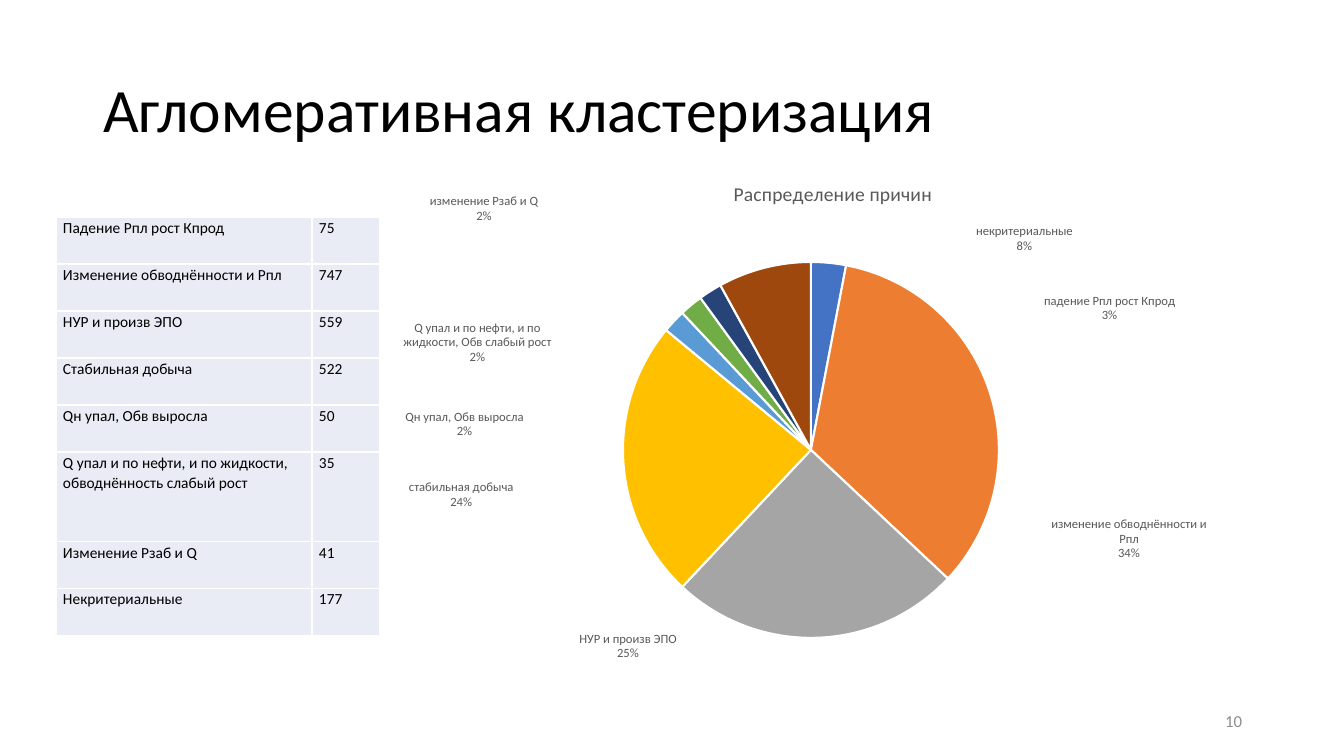
from lxml import etree
from pptx import Presentation
from pptx.chart.data import CategoryChartData
from pptx.dml.color import RGBColor
from pptx.enum.chart import XL_CHART_TYPE, XL_LABEL_POSITION
from pptx.enum.text import MSO_ANCHOR, PP_ALIGN
from pptx.oxml import parse_xml
from pptx.oxml.ns import nsdecls, qn
from pptx.util import Pt

PX = 914400 / 100.8
FONT = "Calibri"
PIE, OUTSIDE = XL_CHART_TYPE.PIE, XL_LABEL_POSITION.OUTSIDE_END
MIDDLE, LEFT, RIGHT = MSO_ANCHOR.MIDDLE, PP_ALIGN.LEFT, PP_ALIGN.RIGHT
COLORS = {"text": "000000", "number": "8C8C8C", "label": "595959",
          "cell": "E9EBF5", "white": "FFFFFF"}
SLICE_COLORS = ["4472C4", "ED7D31", "A5A5A5", "FFC000",
                "5B9BD5", "70AD47", "264478", "9E480E"]

COUNTS = [
    ("Падение Рпл рост Кпрод", 75),
    ("Изменение обводнённости и Рпл", 747),
    ("НУР и произв ЭПО", 559),
    ("Стабильная добыча", 522),
    ("Qн упал, Обв выросла", 50),
    ("Q упал и по нефти, и по жидкости, обводнённость слабый рост", 35),
    ("Изменение Рзаб и Q", 41),
    ("Некритериальные", 177),
]
# Category, percent, label shift in px from its place beside the slice
CAUSES = [
    ("падение Рпл рост Кпрод", 3, 215, 66),
    ("изменение обводнённости и Рпл", 34, 56, 171),
    ("НУР и произв ЭПО", 25, -189, -12),
    ("стабильная добыча", 24, -104, 33),
    ("Qн упал, Обв выросла", 2, -146, 122),
    ("Q упал и по нефти, и по жидкости, Обв слабый рост", 2, -136, 64),
    ("изменение Рзаб и Q", 2, -169, -63),
    ("некритериальные", 8, 310, -9),
]


def box(*lengths):
    return [round(length * PX) for length in lengths]


def style(font, size, color):
    font.name, font.size, font.bold = FONT, Pt(size), False
    font.color.rgb = RGBColor.from_string(COLORS[color])


prs = Presentation()
prs.slide_width, prs.slide_height = box(1344, 756)
slide = prs.slides.add_slide(prs.slide_layouts[5])

# Title
title = slide.shapes.title
title.left, title.top, title.width, title.height = box(93, 40, 1159, 146)
title.text_frame.text = "Агломеративная кластеризация"
title.text_frame.vertical_anchor = MIDDLE
heading = title.text_frame.paragraphs[0]
heading.alignment, heading.line_spacing = LEFT, 0.9
style(heading.runs[0].font, 44, "text")

# Slide number
number = slide.shapes.add_textbox(*box(950, 701, 302, 40)).text_frame
number.word_wrap = True
number.vertical_anchor = MIDDLE
number.text = "10"
number.paragraphs[0].alignment = RIGHT
style(number.paragraphs[0].runs[0].font, 12, "number")

# Pie chart
CHART_W, CHART_H = 860, 526
causes = CategoryChartData()
causes.categories = [cause[0] for cause in CAUSES]
causes.add_series("Series 1", [cause[1] for cause in CAUSES])
chart = slide.shapes.add_chart(PIE, *box(403, 161, CHART_W, CHART_H), causes).chart
style(chart.font, 10, "text")
chart.has_legend = False
chart.has_title = True
chart.chart_title.include_in_layout = False
chart_heading = chart.chart_title.text_frame
chart_heading.text = "Распределение причин"
style(chart_heading.paragraphs[0].runs[0].font, 14, "label")

# Place of the pie inside the chart, in px
plot_area = chart.plots[0]._element.getparent()
for old in plot_area.findall(qn("c:layout")):
    plot_area.remove(old)
sides = "".join(f'<c:{tag} val="{value:.4f}"/>' for tag, value in (
    ("x", 220 / CHART_W), ("y", 101 / CHART_H),
    ("w", 376 / CHART_W), ("h", 376 / CHART_H)))
plot_area.insert(0, parse_xml(
    f'<c:layout {nsdecls("c")}><c:manualLayout><c:layoutTarget val="inner"/>'
    f'<c:xMode val="edge"/><c:yMode val="edge"/>{sides}</c:manualLayout></c:layout>'))

# Slices and their labels
chart.plots[0].vary_by_categories = True
shares = chart.plots[0].series[0]
labels = shares.data_labels
labels.show_value = False
labels.show_category_name = labels.show_percentage = True
labels.show_legend_key = False
labels.position = OUTSIDE
style(labels.font, 9, "label")
for i, (_, _, dx, dy) in enumerate(CAUSES):
    point = shares.points[i]
    point.format.fill.solid()
    point.format.fill.fore_color.rgb = RGBColor.from_string(SLICE_COLORS[i])
    point.format.line.color.rgb = RGBColor.from_string(COLORS["white"])
    point.format.line.width = Pt(1.5)
    style(point.data_label.font, 9, "label")
    point.data_label.position = OUTSIDE
    label = labels._element.findall(qn("c:dLbl"))[i]
    label.insert(1, parse_xml(
        f'<c:layout {nsdecls("c")}><c:manualLayout><c:x val="{dx / CHART_W:.4f}"/>'
        f'<c:y val="{dy / CHART_H:.4f}"/></c:manualLayout></c:layout>'))
    for tag, shown in (("showVal", "0"), ("showCatName", "1"), ("showPercent", "1")):
        label.find(qn(f"c:{tag}")).set("val", shown)
for group in [labels._element, *labels._element.findall(qn("c:dLbl"))]:
    separator = parse_xml(f'<c:separator {nsdecls("c")}>\n</c:separator>')
    group.find(qn("c:showBubbleSize")).addnext(separator)
leader = labels._element.find(qn("c:showLeaderLines"))
if leader is None:
    leader = etree.Element(qn("c:showLeaderLines"))
    labels._element.find(qn("c:separator")).addnext(leader)
leader.set("val", "0")

# Table of counts
table = slide.shapes.add_table(len(COUNTS), 2, *box(56, 217, 324, 419)).table
table.first_row = table.horz_banding = False
for column, width in zip(table.columns, box(256, 68)):
    column.width = width
for r, record in enumerate(COUNTS):
    table.rows[r].height = box(90 if len(record[0]) > 40 else 47)[0]
    for c, value in enumerate(record):
        cell = table.cell(r, c)
        cell.margin_left, cell.margin_right, cell.margin_top, cell.margin_bottom = box(7, 7, 0, 0)
        cell.text_frame.text = str(value)
        entry = cell.text_frame.paragraphs[0]
        entry.line_spacing, entry.space_after = 1.07, Pt(8)
        style(entry.runs[0].font, 11, "text")
        cell.fill.solid()
        cell.fill.fore_color.rgb = RGBColor.from_string(COLORS["cell"])
        for i, side in enumerate(("lnL", "lnR", "lnT", "lnB")):
            cell._tc.get_or_add_tcPr().insert(i, parse_xml(
                f'<a:{side} {nsdecls("a")} w="12700"><a:solidFill>'
                f'<a:srgbClr val="{COLORS["white"]}"/></a:solidFill></a:{side}>'))

prs.save("out.pptx")
